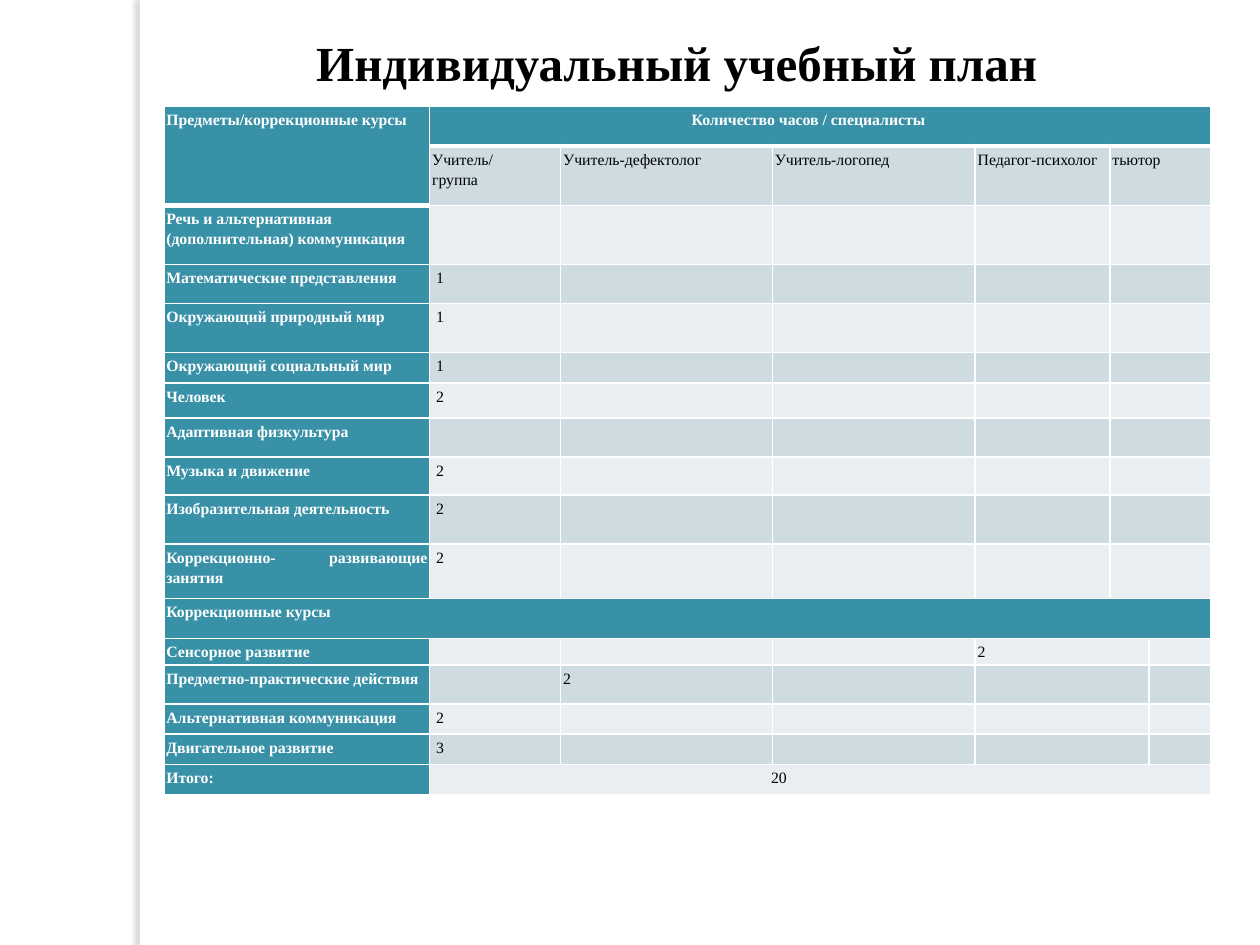
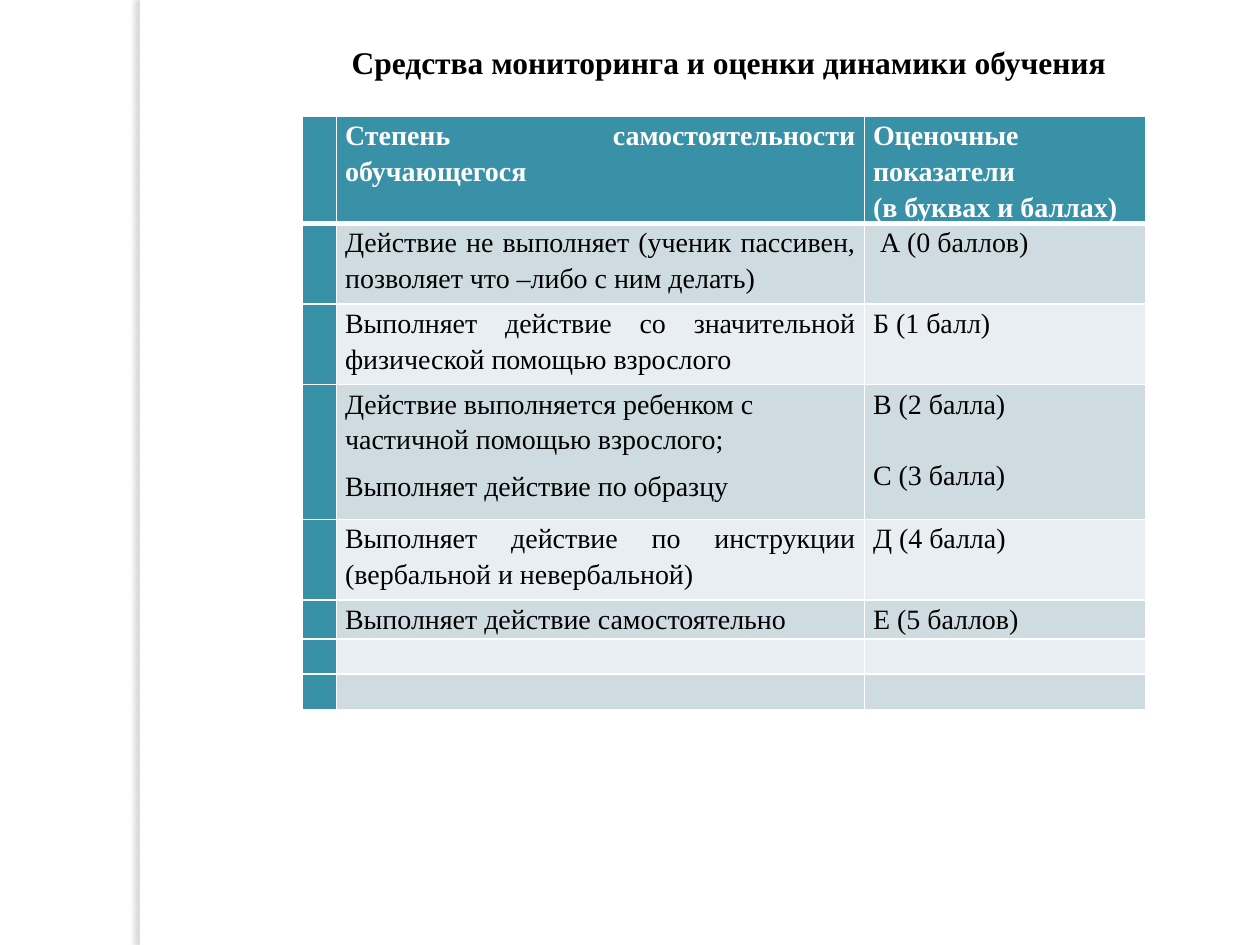
from dataclasses import dataclass

from lxml import etree
from pptx import Presentation
from pptx.dml.color import RGBColor
from pptx.enum.shapes import MSO_SHAPE
from pptx.enum.text import MSO_ANCHOR, PP_ALIGN
from pptx.oxml import parse_xml
from pptx.oxml.ns import nsdecls, qn
from pptx.util import Inches, Pt


@dataclass(frozen=True)
class Theme:
    font: str = "Times New Roman"
    accent: str = "3891A7"
    dark_row: str = "CEDCE1"
    light_row: str = "E8EEF1"
    white: str = "FFFFFF"
    black: str = "000000"
    shadow: str = "736F63"
    thin: float = 1
    thick: float = 3
    spacing: float = 1.15


TH = Theme()

# Content: each row is (height, {column: text})
PLAN = {
    "title": "Индивидуальный учебный план",
    "title_box": (1.93, 0.21, 6.93, 0.6), "title_size": 28, "title_indent": 0.58,
    "at": (1.3, 0.84), "size": 9, "margins": (0.02, 0.02),
    "cols": [2.11, 1.04, 1.68, 1.61, 1.07, 0.31, 0.49],
    "rows": [
        (0.32, {0: "Предметы/коррекционные курсы", 1: "Количество часов / специалисты"}),
        (0.47, {1: "Учитель/\nгруппа", 2: "Учитель-дефектолог", 3: "Учитель-логопед",
                4: "Педагог-психолог", 5: "тьютор"}),
        (0.47, {0: "Речь и альтернативная (дополнительная) коммуникация"}),
        (0.31, {0: "Математические представления", 1: " 1"}),
        (0.39, {0: "Окружающий природный мир", 1: " 1"}),
        (0.24, {0: "Окружающий социальный мир", 1: " 1"}),
        (0.28, {0: "Человек", 1: " 2"}),
        (0.31, {0: "Адаптивная физкультура"}),
        (0.3, {0: "Музыка и движение", 1: " 2"}),
        (0.39, {0: "Изобразительная деятельность", 1: " 2"}),
        (0.43, {0: "Коррекционно- развивающие занятия", 1: " 2"}),
        (0.32, {0: "Коррекционные курсы"}),
        (0.21, {0: "Сенсорное развитие", 4: "2"}),
        (0.31, {0: "Предметно-практические действия", 2: "2"}),
        (0.24, {0: "Альтернативная коммуникация", 1: " 2"}),
        (0.24, {0: "Двигательное развитие", 1: " 3"}),
        (0.24, {0: "Итого:", 1: "20"}),
    ],
    # Merged areas as (first row, first column, last row, last column)
    "merges": [(0, 0, 1, 0), (0, 1, 0, 6), (11, 0, 11, 6), (16, 1, 16, 6)]
    + [(r, 5, r, 6) for r in range(1, 11)]
    + [(r, 4, r, 5) for r in range(12, 16)],
    "section_rows": {0, 11},
    "head_cells": {(0, c) for c in range(7)} | {(1, 0)},
    "left_cells": {(2, 0)},
    "indents": {(0, 1): 2.08, (16, 1): 2.71},
    "gaps": {},
}

MONITORING = {
    "title": "Средства мониторинга и оценки динамики обучения",
    "title_box": (1.95, 0.29, 7.11, 0.4), "title_size": 18, "title_indent": 0.84,
    "at": (2.4, 0.92), "size": 16, "margins": (0.07, 0),
    "cols": [0.27, 4.19, 2.23],
    "rows": [
        (0.85, {1: "Степень самостоятельности обучающегося",
                2: "Оценочные показатели\n(в буквах и баллах)"}),
        (0.64, {1: "Действие не выполняет (ученик пассивен, позволяет что –либо с ним делать)",
                2: " А (0 баллов)"}),
        (0.64, {1: "Выполняет действие со значительной физической помощью взрослого",
                2: "Б (1 балл)"}),
        (1.07, {1: "Действие выполняется ребенком с частичной помощью взрослого;\n"
                   "Выполняет действие по образцу",
                2: "В (2 балла)\nС (3 балла)"}),
        (0.64, {1: "Выполняет действие по инструкции (вербальной и невербальной)",
                2: "Д (4 балла)"}),
        (0.31, {1: "Выполняет действие самостоятельно", 2: "Е (5 баллов)"}),
        (0.28, {}),
        (0.28, {}),
    ],
    "merges": [],
    "section_rows": {0},
    "head_cells": {(0, c) for c in range(3)},
    "left_cells": {(3, 1)},
    "indents": {},
    "gaps": {(3, 1): 6, (3, 2): 20.5},  # points before later paragraphs
}


def rgb(color):
    return RGBColor.from_string(color)


def style_font(p, size, color, bold):
    for r in p.runs:
        f = r.font
        f.name, f.size, f.bold = TH.font, Pt(size), bold
        f.color.rgb = rgb(color)


def add_side_band(prs, slide):
    """Put the white band with its soft left shadow on the slide master."""
    sp = slide.shapes.add_shape(MSO_SHAPE.RECTANGLE, Inches(1.11), 0,
                                Inches(0.08), prs.slide_height)
    sp.fill.solid()
    sp.fill.fore_color.rgb = rgb(TH.white)
    sp.line.fill.background()
    sp.shadow.inherit = False
    sp.element.spPr.find(qn("a:effectLst")).append(parse_xml(
        f'<a:outerShdw {nsdecls("a")} blurRad="{Pt(3)}" dist="{Pt(3)}" dir="10800000" '
        f'rotWithShape="0"><a:srgbClr val="{TH.shadow}"><a:alpha val="25000"/>'
        '</a:srgbClr></a:outerShdw>'))
    prs.slide_master.shapes[0].element.addprevious(sp.element)


def add_title(slide, data):
    sp = slide.shapes.title
    sp.left, sp.top, sp.width, sp.height = map(Inches, data["title_box"])
    tf = sp.text_frame
    tf.text = data["title"]
    tf.vertical_anchor = MSO_ANCHOR.TOP
    tf.margin_left = Inches(data["title_indent"])
    tf.margin_right = 0
    p = tf.paragraphs[0]
    p.alignment = PP_ALIGN.LEFT
    style_font(p, data["title_size"], TH.black, True)


def set_borders(cell, top, bottom):
    tc_pr = cell._tc.get_or_add_tcPr()
    for side, width in (("L", TH.thin), ("R", TH.thin), ("T", top), ("B", bottom)):
        ln = etree.SubElement(tc_pr, qn(f"a:ln{side}"), w=str(Pt(width)))
        fill = etree.SubElement(ln, qn("a:solidFill"))
        etree.SubElement(fill, qn("a:srgbClr"), val=TH.white)


def format_cell(cell, data, r, c):
    pos = (r, c)
    labelled = c == 0 or r in data["section_rows"]
    heads = data["head_cells"]

    # Borders, fill and margins
    set_borders(cell, TH.thick if (r - 1, c) in heads else TH.thin,
                TH.thick if pos in heads else TH.thin)
    cell.fill.solid()
    cell.fill.fore_color.rgb = rgb(
        TH.accent if labelled else TH.dark_row if r % 2 else TH.light_row)
    side, edge = map(Inches, data["margins"])
    cell.margin_left = Inches(data["indents"].get(pos, data["margins"][0]))
    cell.margin_right = side
    cell.margin_top = cell.margin_bottom = edge

    # Text
    cell.text = data["rows"][r][1].get(c, "")
    for i, p in enumerate(cell.text_frame.paragraphs):
        p.alignment = PP_ALIGN.LEFT if pos in data["left_cells"] else PP_ALIGN.JUSTIFY
        p.line_spacing = TH.spacing
        if i and pos in data["gaps"]:
            p.space_before = Pt(data["gaps"][pos])
        style_font(p, data["size"], TH.white if labelled else TH.black, labelled)
        if not p.runs:  # keeps empty rows low
            etree.SubElement(p._p, qn("a:endParaRPr"), sz=str(min(data["size"], 12) * 100))


def add_grid(slide, data):
    cols, rows = data["cols"], data["rows"]
    left, top = data["at"]
    size = (sum(cols), sum(height for height, _ in rows))
    table = slide.shapes.add_table(len(rows), len(cols),
                                   *map(Inches, (left, top, *size))).table
    table.first_row = table.horz_banding = False
    for c, width in enumerate(cols):
        table.columns[c].width = Inches(width)
    for r, (height, _) in enumerate(rows):
        table.rows[r].height = Inches(height)
        for c in range(len(cols)):
            format_cell(table.cell(r, c), data, r, c)
    for r1, c1, r2, c2 in data["merges"]:
        table.cell(r1, c1).merge(table.cell(r2, c2))


def main():
    prs = Presentation()
    prs.slide_width, prs.slide_height = Inches(10), Inches(7.5)
    title_only = prs.slide_layouts[5]
    for data in (PLAN, MONITORING):
        slide = prs.slides.add_slide(title_only)
        add_title(slide, data)
        add_grid(slide, data)
    add_side_band(prs, prs.slides[0])
    prs.save("out.pptx")


if __name__ == "__main__":
    main()
